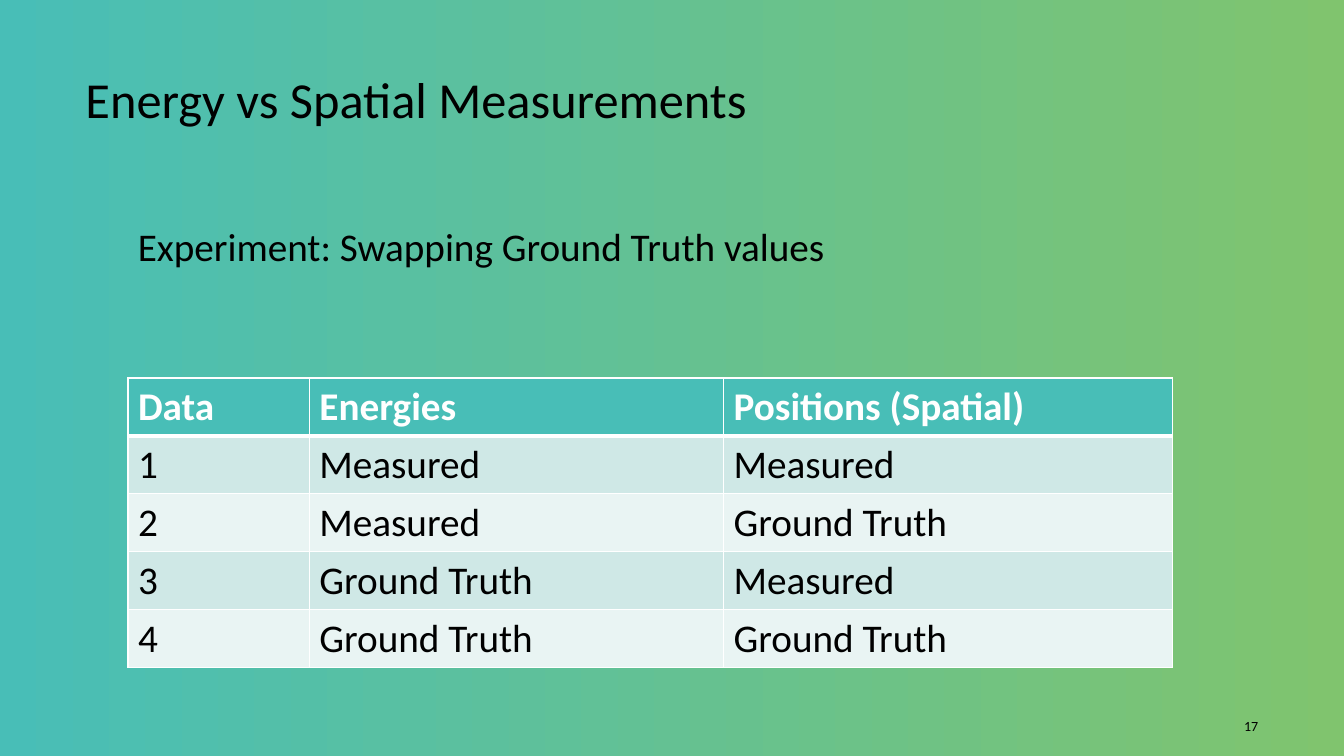
from lxml.etree import SubElement
from pptx import Presentation
from pptx.dml.color import RGBColor
from pptx.enum.text import MSO_ANCHOR, PP_ALIGN
from pptx.oxml.ns import qn
from pptx.util import Pt

FONT = "Calibri"
BLACK, WHITE, TEAL, GREEN = "000000", "FFFFFF", "48BEB7", "80C46E"
BANDS = ["CFE8E6", "E9F4F3"]

TITLE = "Energy vs Spatial Measurements"
EXPERIMENT = "Experiment: Swapping Ground Truth values"
PAGE_NUMBER = "17"
MEASUREMENTS = [
    ("Data", "Energies", "Positions (Spatial)"),
    ("1", "Measured", "Measured"),
    ("2", "Measured", "Ground Truth"),
    ("3", "Ground Truth", "Measured"),
    ("4", "Ground Truth", "Ground Truth"),
]
COLUMN_WIDTHS = [129.6, 295.9, 320.4]
ROW_HEIGHT = 41.4


def rgb(hex_color):
    return RGBColor.from_string(hex_color)


def add_run(paragraph, text, size, color=BLACK, bold=False):
    run = paragraph.add_run()
    run.text = text
    run.font.name = FONT
    run.font.size = Pt(size)
    run.font.bold = bold
    run.font.color.rgb = rgb(color)


def add_text(slide, box, text, size, anchor=MSO_ANCHOR.MIDDLE,
             align=PP_ALIGN.LEFT, line_spacing=1.0):
    frame = slide.shapes.add_textbox(*map(Pt, box)).text_frame
    frame.word_wrap = True
    frame.vertical_anchor = anchor
    paragraph = frame.paragraphs[0]
    paragraph.alignment = align
    paragraph.line_spacing = line_spacing
    add_run(paragraph, text, size)


def set_border(cell, side, width):
    properties = cell._tc.get_or_add_tcPr()
    line = SubElement(properties, qn(f"a:ln{side}"), w=str(Pt(width)))
    fill = SubElement(line, qn("a:solidFill"))
    SubElement(fill, qn("a:srgbClr"), val=WHITE)


def add_measurements(slide, left, top):
    size = (sum(COLUMN_WIDTHS), ROW_HEIGHT * len(MEASUREMENTS))
    table = slide.shapes.add_table(
        len(MEASUREMENTS), len(COLUMN_WIDTHS), *map(Pt, (left, top, *size))
    ).table
    for column, width in zip(table.columns, COLUMN_WIDTHS):
        column.width = Pt(width)
    for r, values in enumerate(MEASUREMENTS):
        table.rows[r].height = Pt(ROW_HEIGHT)
        header = r == 0
        borders = {"L": 1, "R": 1, "T": 3 if r == 1 else 1, "B": 3 if header else 1}
        for c, value in enumerate(values):
            cell = table.cell(r, c)
            for side, width in borders.items():
                set_border(cell, side, width)
            cell.fill.solid()
            cell.fill.fore_color.rgb = rgb(TEAL if header else BANDS[(r - 1) % 2])
            add_run(cell.text_frame.paragraphs[0], value, 28,
                    WHITE if header else BLACK, header)


def main():
    deck = Presentation()
    deck.slide_width, deck.slide_height = Pt(960), Pt(540)
    slide = deck.slides.add_slide(deck.slide_layouts[6])

    background = slide.background.fill
    background.gradient()
    background.gradient_angle = 0
    for stop, color in zip(background.gradient_stops, (TEAL, GREEN)):
        stop.color.rgb = rgb(color)

    add_text(slide, (54, 31, 851.8, 78.5), TITLE, 36)
    add_text(slide, (862.6, 506.2, 43.2, 25.2), PAGE_NUMBER, 10,
             align=PP_ALIGN.RIGHT)
    add_text(slide, (91.4, 159.1, 720.7, 118.8), EXPERIMENT, 28,
             anchor=MSO_ANCHOR.TOP, line_spacing=0.9)
    add_measurements(slide, 91.4, 270)
    deck.save("out.pptx")


if __name__ == "__main__":
    main()
